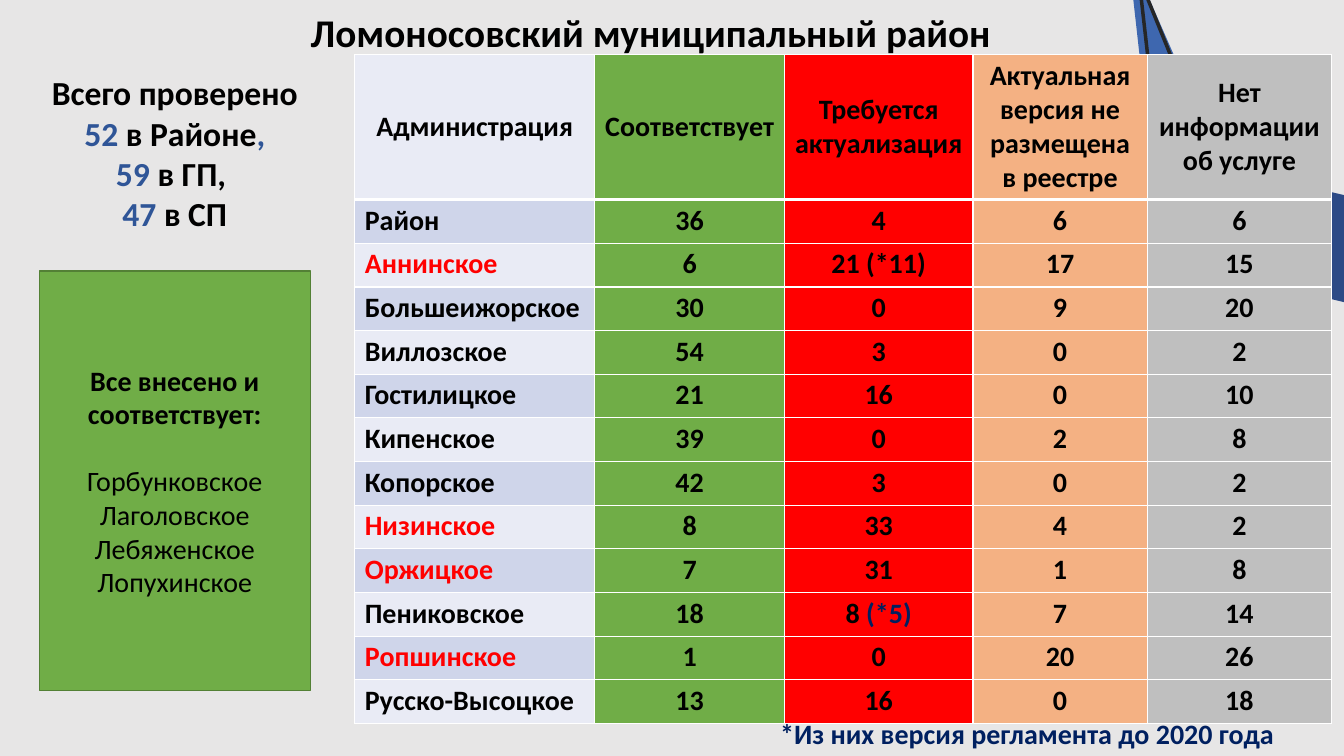
"""Builds the slide on service regulations in the Lomonosovsky municipal district."""
from dataclasses import dataclass

from lxml import etree
from pptx import Presentation
from pptx.dml.color import RGBColor
from pptx.enum import shapes, text
from pptx.oxml import ns
from pptx.util import Cm, Pt


@dataclass(frozen=True)
class Theme:
    font: str = "Calibri"
    background: str = "E7E6E6"
    black: str = "000000"
    white: str = "FFFFFF"
    red: str = "FF0000"
    navy: str = "002060"
    blue: str = "2F5597"
    green: str = "70AD47"
    green_line: str = "538035"
    orange: str = "F4B183"
    gray: str = "BFBFBF"
    bands: tuple = ("E9EBF5", "CFD5EA")
    ray_dark: str = "2C4A86"
    ray_light: str = "3E67AF"
    ray_line: str = "262626"
    title_size: int = 28
    summary_size: int = 24
    body_size: int = 20


theme = Theme()
CENTER, LEFT = text.PP_ALIGN.CENTER, text.PP_ALIGN.LEFT


def write(text_frame, lines, size, align=CENTER):
    """Fills a text frame with lines made of (text, colour) parts."""
    for index, parts in enumerate(lines):
        paragraph = text_frame.paragraphs[0] if index == 0 else text_frame.add_paragraph()
        paragraph.alignment = align
        for words, color in parts:
            run = paragraph.add_run()
            run.text = words
            run.font.name = theme.font
            run.font.size = Pt(size)
            run.font.bold = True
            run.font.color.rgb = RGBColor.from_string(color)


def set_borders(cell, top, bottom):
    """Draws white borders with the given top and bottom widths in points."""
    properties = cell._tc.get_or_add_tcPr()
    widths = {"lnL": 1, "lnR": 1, "lnT": top, "lnB": bottom}
    for position, (side, width) in enumerate(widths.items()):
        border = etree.Element(ns.qn(f"a:{side}"), w=str(Pt(width)))
        fill = etree.SubElement(border, ns.qn("a:solidFill"))
        etree.SubElement(fill, ns.qn("a:srgbClr"), val=theme.white)
        properties.insert(position, border)


presentation = Presentation()
presentation.slide_width = Cm(33.87)
presentation.slide_height = Cm(19.05)
slide = presentation.slides.add_slide(presentation.slide_layouts[6])
slide.background.fill.solid()
slide.background.fill.fore_color.rgb = RGBColor.from_string(theme.background)

rays = [
    ([(37.16, 5.69), (30.78, 4.19), (29.29, 6.5), (36.4, 8.23)], theme.ray_dark),
    ([(29.29, 6.5), (28.42, -1.27), (32.11, 7.16)], theme.ray_light),
    ([(29.51, 6.58), (28.7, -0.58), (31.93, 7.39)], None),
]
for points, color in rays:
    corners = [(Cm(x), Cm(y)) for x, y in points]
    builder = slide.shapes.build_freeform(*corners[0])
    builder.add_line_segments(corners[1:], close=True)
    ray = builder.convert_to_shape()
    ray.shadow.inherit = False
    if color:
        ray.fill.solid()
        ray.fill.fore_color.rgb = RGBColor.from_string(color)
        ray.line.fill.background()
    else:
        ray.fill.background()
        ray.line.color.rgb = RGBColor.from_string(theme.ray_line)
        ray.line.width = Pt(2.5)

rows = [
    ("Администрация", "Соответствует", "Требуется актуализация",
     "Актуальная версия не размещена в реестре", "Нет информации об услуге"),
    ("Район", "36", "4", "6", "6"),
    ("Аннинское", "6", "21 (*11)", "17", "15"),
    ("Большеижорское", "30", "0", "9", "20"),
    ("Виллозское", "54", "3", "0", "2"),
    ("Гостилицкое", "21", "16", "0", "10"),
    ("Кипенское", "39", "0", "2", "8"),
    ("Копорское", "42", "3", "0", "2"),
    ("Низинское", "8", "33", "4", "2"),
    ("Оржицкое", "7", "31", "1", "8"),
    ("Пениковское", "18", "8 (*5)", "7", "14"),
    ("Ропшинское", "1", "0", "20", "26"),
    ("Русско-Высоцкое", "13", "16", "0", "18"),
]
lagging = {"Аннинское", "Низинское", "Оржицкое", "Ропшинское"}
special_cells = {"8 (*5)": [("8 ", theme.black), ("(*5)", theme.navy)]}
column_widths = [6.05, 4.78, 4.75, 4.39, 4.65]
column_fills = [None, theme.green, theme.red, theme.orange, theme.gray]
header_height, row_height = 3.66, 1.1

table = slide.shapes.add_table(
    len(rows), len(column_widths), Cm(8.94), Cm(1.37), Cm(sum(column_widths)),
    Cm(header_height + row_height * (len(rows) - 1))).table
for column, width in zip(table.columns, column_widths):
    column.width = Cm(width)
for row_index, values in enumerate(rows):
    is_header = row_index == 0
    table.rows[row_index].height = Cm(header_height if is_header else row_height)
    for column_index, value in enumerate(values):
        cell = table.cell(row_index, column_index)
        cell.margin_top = cell.margin_bottom = Cm(0.1)
        cell.fill.solid()
        cell.fill.fore_color.rgb = RGBColor.from_string(
            column_fills[column_index] or theme.bands[row_index % 2])
        if is_header:
            cell.vertical_anchor = text.MSO_ANCHOR.MIDDLE
        color = theme.red if value in lagging else theme.black
        align = CENTER if is_header or column_index else LEFT
        parts = special_cells.get(value, [(value, color)])
        write(cell.text_frame, [parts], theme.body_size, align)
        set_borders(cell, top=3 if row_index == 1 else 1, bottom=3 if is_header else 1)

complete_box = slide.shapes.add_shape(
    shapes.MSO_SHAPE.RECTANGLE, Cm(0.99), Cm(6.83), Cm(6.83), Cm(10.57))
complete_box.shadow.inherit = False
complete_box.fill.solid()
complete_box.fill.fore_color.rgb = RGBColor.from_string(theme.green)
complete_box.line.color.rgb = RGBColor.from_string(theme.green_line)
complete_box.line.width = Pt(1)
complete_box.text_frame.word_wrap = True
complete_box.text_frame.vertical_anchor = text.MSO_ANCHOR.MIDDLE
complete_lines = ["Все внесено и соответствует:", "Горбунковское Лаголовское",
                  "Лебяженское", "Лопухинское"]
write(complete_box.text_frame, [[(line, theme.black)] for line in complete_lines],
      theme.body_size)
settlements = complete_box.text_frame.paragraphs[1:]
settlements[0].space_before = Pt(24)
for paragraph in settlements:
    paragraph.runs[0].font.bold = False

summary = [
    [("Всего проверено ", theme.black)],
    [("52 ", theme.blue), ("в Районе", theme.black), (",", theme.blue)],
    [("59 ", theme.blue), ("в ГП, ", theme.black)],
    [("47 ", theme.blue), ("в СП", theme.black)],
]
title = [[("Ломоносовский муниципальный район", theme.black)]]
footnote = [[("*Из них версия регламента до 2020 года", theme.navy)]]
text_boxes = [
    ((0.99, 1.7, 6.83, 5.13), summary, theme.summary_size, CENTER, True),
    ((7.16, 0.08, 18.47, 1.45), title, theme.title_size, CENTER, False),
    ((19.41, 17.93, 14.12, 1.12), footnote, theme.body_size, LEFT, True),
]
for place, lines, size, align, wraps in text_boxes:
    text_frame = slide.shapes.add_textbox(*map(Cm, place)).text_frame
    text_frame.word_wrap = wraps
    text_frame.auto_size = text.MSO_AUTO_SIZE.SHAPE_TO_FIT_TEXT
    write(text_frame, lines, size, align)

presentation.save("out.pptx")
